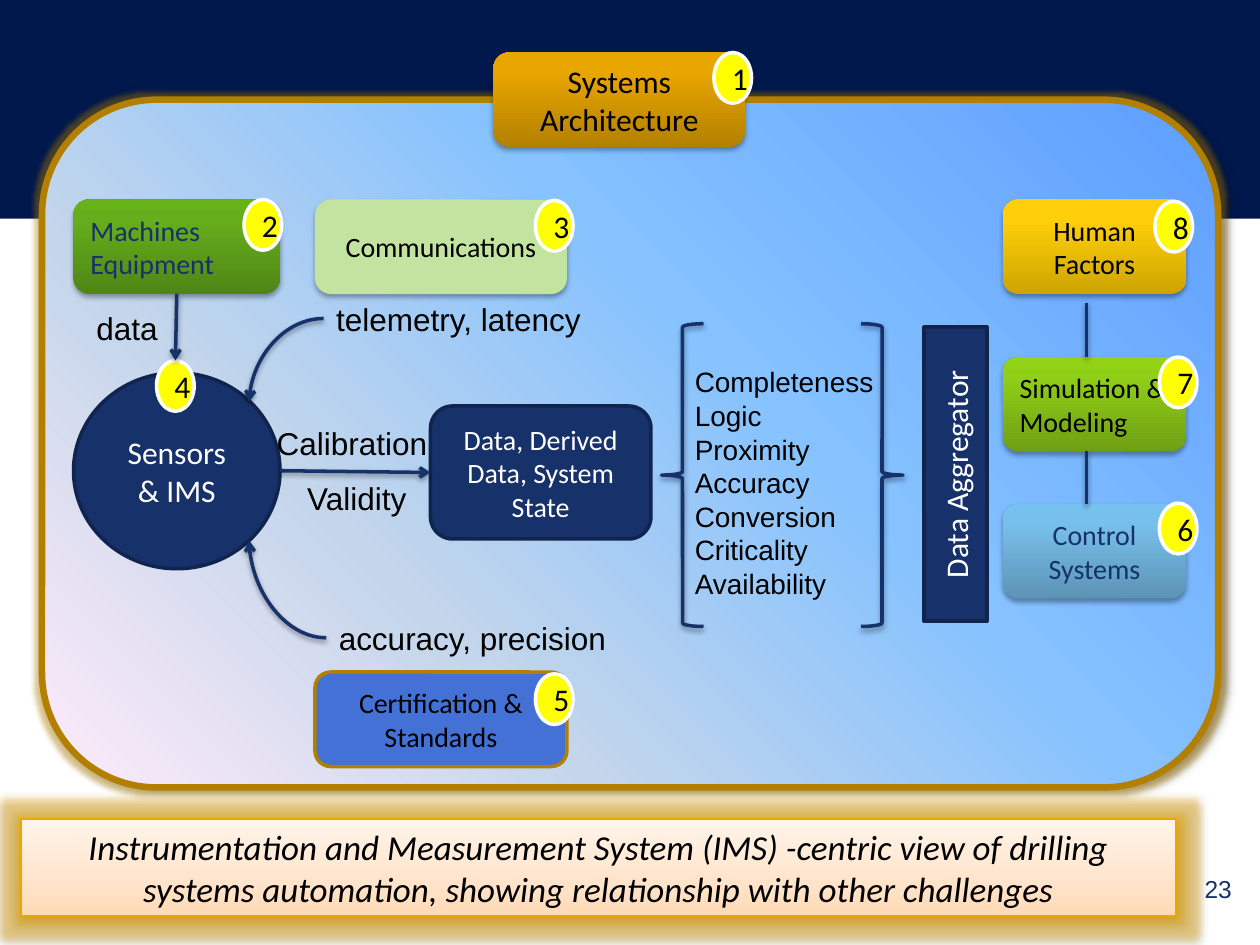
from lxml.etree import SubElement
from pptx import Presentation
from pptx.dml.color import RGBColor
from pptx.enum.shapes import MSO_CONNECTOR as Link, MSO_SHAPE as Shape
from pptx.enum.text import MSO_ANCHOR as Anchor, MSO_AUTO_SIZE as AutoSize, PP_ALIGN as Align
from pptx.oxml.ns import qn
from pptx.util import Pt

NAVY, NAVY_EDGE, GOLD, BLACK, WHITE = "17316A", "11244E", "B27F00", "000000", "FFFFFF"
# Shadows: colour, opacity %, blur, distance, direction. Glows: colour, opacity %, radius.
BOX_SHADOW = (BLACK, 35, 3.1, 1.8, 90)
LINE_SHADOW = (BLACK, 38, 3.1, 1.6, 90)
PANEL_SHADOW = (BLACK, 40, 4, 3, 0)
PANEL_GLOW = (GOLD, 40, 5)
BANNER_GLOW = ("EBA700", 40, 8)

PANEL_FILL = [(0, "5E9EFF"), (40, "85C2FF"), (70, "C4D6EB"), (100, "FFEBFA")]
BANNER_FILL = [(0, "FFDAB5"), (35, "FFE4CB"), (100, "FFF5EB")]
BANNER = ("Instrumentation and Measurement System (IMS) -centric view of drilling "
          "systems automation, showing relationship with other challenges")


def shaded(dark, middle, light):
    return [(0, dark), (80, middle), (100, light)]


BOX_H = 54
# topic: left, top, width, fill, outline, text colour, size, alignment, badge number, badge left, badge top
TOPICS = {
    "Communications": (180, 114, 144, "C3E4A1", None, BLACK, 16, Align.CENTER, 3, 306, 114.5),
    "Machines Equipment": (42, 114, 118, shaded("4F8615", "66AE1C", "67B119"), None, NAVY, 16,
                           Align.LEFT, 2, 139.5, 114),
    "Control Systems": (573, 288, 105, shaded("5C94B5", "77C0EB", "76C2EF"), None, NAVY, 16,
                        Align.CENTER, 6, 662.5, 287.5),
    "Simulation & Modeling": (573, 204, 105, shaded("6FA013", "90CF18", "92D415"), None, BLACK, 16,
                              Align.LEFT, 7, 662.5, 204),
    "Human Factors": (573, 114, 105, shaded("CEA500", "FFCF0C", "FFCF0E"), None, BLACK, 16,
                      Align.CENTER, 8, 660, 115),
    "Certification & Standards": (180, 384, 144, "4371D6", GOLD, BLACK, 16, Align.CENTER,
                                  5, 306, 385),
    "Systems Architecture": (282, 30, 144, shaded("B38000", "E9A600", "EAA600"), None, BLACK, 18,
                             Align.CENTER, 1, 408, 30),
}
QUALITIES = ["Completeness", "Logic", "Proximity", "Accuracy",
             "Conversion", "Criticality", "Availability"]
# lines, box, size
LABELS = [
    (["telemetry, latency"], (185, 168, 156, 29), 18),
    (["accuracy, precision"], (186.5, 350, 168, 29), 18),
    (["Calibration"], (151, 238.5, 101, 29), 18),
    (["Validity"], (168.5, 270, 72, 29), 18),
    (["data"], (48, 173, 50, 29), 18),
    (QUALITIES, (390, 205, 117, 143), 16),
]

deck = Presentation()
deck.slide_width, deck.slide_height = Pt(720), Pt(540)
slide = deck.slides.add_slide(deck.slide_layouts[6])


def rgb(value):
    return RGBColor.from_string(value)


def add_colour(parent, value, opacity):
    colour = SubElement(parent, qn("a:srgbClr"), val=value)
    SubElement(colour, qn("a:alpha"), val=str(opacity * 1000))


def set_effects(shape, shadow=None, glow=None):
    effects = SubElement(shape._element.spPr, qn("a:effectLst"))
    if glow:
        value, opacity, radius = glow
        add_colour(SubElement(effects, qn("a:glow"), rad=str(Pt(radius))), value, opacity)
    if shadow:
        value, opacity, blur, distance, direction = shadow
        outer = SubElement(effects, qn("a:outerShdw"), blurRad=str(Pt(blur)),
                           dist=str(Pt(distance)), dir=str(direction * 60000), rotWithShape="0")
        add_colour(outer, value, opacity)


def set_fill(shape, fill, angle):
    """Fill with a hex colour, a list of gradient stops, or nothing."""
    if fill is None:
        shape.fill.background()
    elif isinstance(fill, str):
        shape.fill.solid()
        shape.fill.fore_color.rgb = rgb(fill)
    else:
        shape.fill.gradient()
        shape.fill.gradient_angle = angle
        stops = shape._element.spPr.find(qn("a:gradFill")).find(qn("a:gsLst"))
        for stop in list(stops):
            stops.remove(stop)
        for position, value in fill:
            stop = SubElement(stops, qn("a:gs"), pos=str(position * 1000))
            SubElement(stop, qn("a:srgbClr"), val=value)


def add_block(kind, box, fill=None, outline=None, weight=2, shadow=None, glow=None, angle=90):
    block = slide.shapes.add_shape(kind, *map(Pt, box))
    set_fill(block, fill, angle)
    if outline:
        block.line.color.rgb = rgb(outline)
        block.line.width = Pt(weight)
    else:
        block.line.fill.background()
    set_effects(block, shadow, glow)
    return block


def write(shape, lines, size, colour, font="Calibri", align=Align.CENTER, italic=None):
    frame = shape.text_frame
    for index, line in enumerate(lines):
        paragraph = frame.add_paragraph() if index else frame.paragraphs[0]
        paragraph.alignment = align
        run = paragraph.add_run()
        run.text = line
        run.font.size, run.font.name, run.font.italic = Pt(size), font, italic
        run.font.color.rgb = rgb(colour)


def add_badge(number, left, top):
    badge = add_block(Shape.OVAL, (left, top, 21.5, 29), "FFFF00", WHITE)
    write(badge, [str(number)], 18, BLACK)
    return badge


def add_link(start, end, arrow=True, curved=False):
    link = slide.shapes.add_connector(Link.CURVE if curved else Link.STRAIGHT,
                                      *map(Pt, start + end))
    link.line.color.rgb = rgb(NAVY)
    link.line.width = Pt(2)
    if curved:
        link._element.spPr.find(qn("a:prstGeom")).set("prst", "curvedConnector2")
    if arrow:
        SubElement(link.line._get_or_add_ln(), qn("a:tailEnd"), type="arrow")
    set_effects(link, LINE_SHADOW)
    return link


slide.background.fill.solid()
slide.background.fill.fore_color.rgb = rgb("00184C")
add_block(Shape.RECTANGLE, (0, 125, 720, 415), WHITE, shadow=BOX_SHADOW)
page_number = slide.shapes.add_textbox(Pt(561), Pt(490), Pt(150), Pt(36))
page_number.text_frame.word_wrap = True
page_number.text_frame.vertical_anchor = Anchor.MIDDLE
write(page_number, ["23"], 14, NAVY, "Arial", Align.RIGHT)

add_block(Shape.ROUNDED_RECTANGLE, (24, 57, 672, 393), PANEL_FILL, GOLD, 3.75,
          PANEL_SHADOW, PANEL_GLOW, angle=225)
sensors = add_block(Shape.OVAL, (42, 213, 118, 112), NAVY, NAVY_EDGE)
write(sensors, ["Sensors", "& IMS"], 18, WHITE)
derived_data = add_block(Shape.ROUNDED_RECTANGLE, (246, 232, 126, 76), NAVY, NAVY_EDGE)
write(derived_data, ["Data, Derived Data, System State"], 16, WHITE)
aggregator = add_block(Shape.RECTANGLE, (528, 187, 36, 168), NAVY, NAVY_EDGE)
aggregator.text_frame._txBody.bodyPr.set("vert", "vert270")
write(aggregator, ["Data Aggregator"], 18, WHITE)

topic_boxes = {}
for topic, (left, top, width, fill, outline, colour, size, align, *badge) in TOPICS.items():
    topic_box = add_block(Shape.ROUNDED_RECTANGLE, (left, top, width, BOX_H), fill, outline,
                          shadow=None if outline else BOX_SHADOW)
    write(topic_box, [topic], size, colour, align=align)
    add_badge(*badge)
    topic_boxes[topic] = topic_box
sensor_badge = add_badge(4, 89.5, 206)

for lines, box, size in LABELS:
    label = slide.shapes.add_textbox(*map(Pt, box))
    label.text_frame.word_wrap = False
    label.text_frame.auto_size = AutoSize.SHAPE_TO_FIT_TEXT
    write(label, lines, size, BLACK, "Arial", Align.LEFT)

for brace, left in ((Shape.LEFT_BRACE, 378), (Shape.RIGHT_BRACE, 492)):
    add_block(brace, (left, 185, 24, 173), outline=NAVY, shadow=LINE_SHADOW)

add_link((160, 269), (246, 270)).end_connect(derived_data, 1)
machine_data = add_link((101, 168), (100, 206))
machine_data.begin_connect(topic_boxes["Machines Equipment"], 2)
machine_data.end_connect(sensor_badge, 0)
add_link((185, 182), (142.5, 229.5), curved=True)
add_link((186.5, 364.5), (142.5, 309), curved=True)
for start_y, end_y in ((173, 204), (258, 288)):
    add_link((621, start_y), (621, end_y), arrow=False)

banner = add_block(Shape.RECTANGLE, (12, 468, 660, 55.5), BANNER_FILL, "EBA700", 0.75,
                   LINE_SHADOW, BANNER_GLOW)
banner.text_frame.vertical_anchor = Anchor.TOP
write(banner, [BANNER], 20, BLACK, italic=True)

deck.save("out.pptx")
